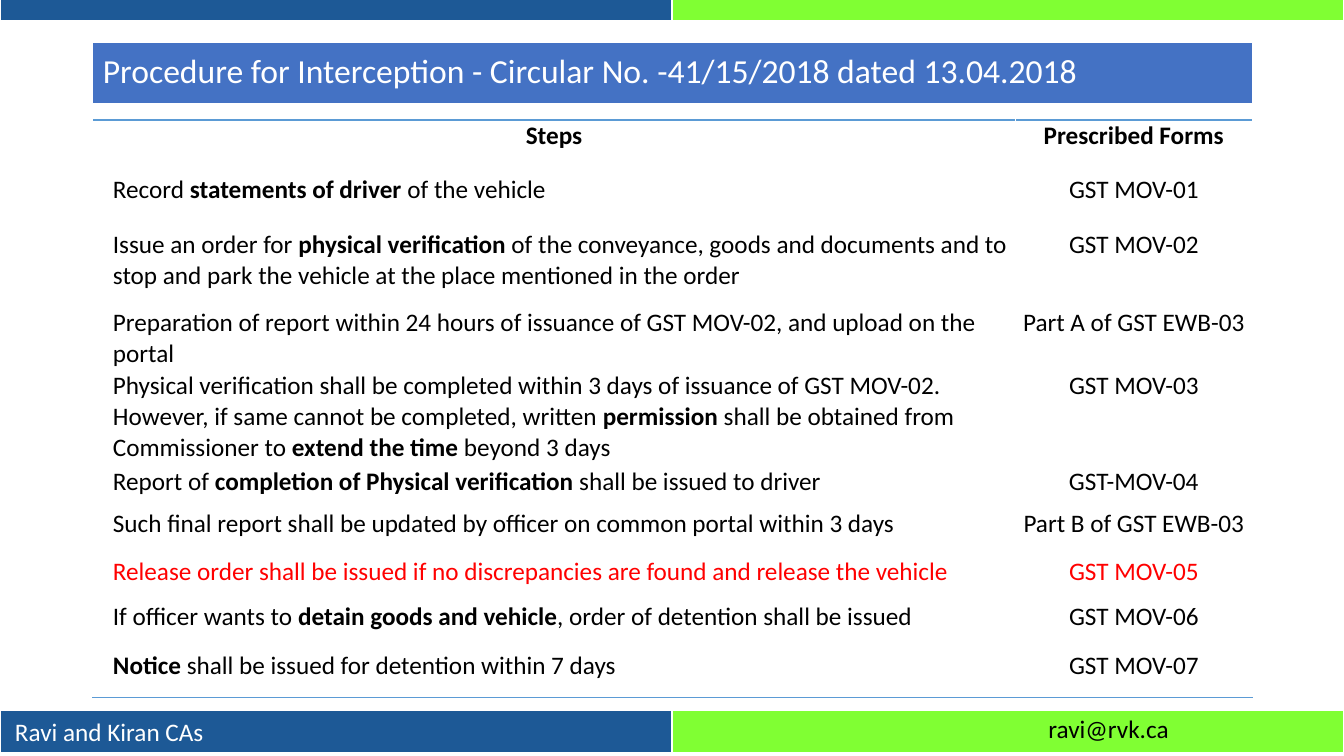
from lxml import etree
from pptx import Presentation
from pptx.dml.color import RGBColor
from pptx.enum.text import MSO_ANCHOR, MSO_AUTO_SIZE, PP_ALIGN
from pptx.oxml.ns import qn
from pptx.util import Inches, Pt

LEFT, CENTER = PP_ALIGN.LEFT, PP_ALIGN.CENTER
MIDDLE = MSO_ANCHOR.MIDDLE
NO_FIT = MSO_AUTO_SIZE.NONE

WHITE = RGBColor(0xFF, 0xFF, 0xFF)
BLACK = RGBColor(0x00, 0x00, 0x00)
RED = RGBColor(0xFF, 0x00, 0x00)
NAVY = RGBColor(0x1D, 0x59, 0x96)
LIME = RGBColor(0x80, 0xFF, 0x33)
TITLE_BLUE = RGBColor(0x44, 0x72, 0xC4)
RULE_BLUE = RGBColor(0x5B, 0x9B, 0xD5)

TITLE = "Procedure for Interception - Circular No. -41/15/2018 dated 13.04.2018"

# Step, form, row height; ** switches bold on and off
STEPS = [
    ("**Steps**", "**Prescribed Forms**", 0.53),
    ("Record **statements of driver **of the vehicle", "GST MOV-01", 0.55),
    ("Issue an order for **physical verification **of the conveyance, goods and documents "
     "and to stop and park the vehicle at the place mentioned in the order", "GST MOV-02", 0.77),
    ("Preparation of report within 24 hours of issuance of GST MOV-02, and upload on the portal",
     "Part A of GST EWB-03", 0.63),
    ("Physical verification shall be completed within 3 days of issuance of GST MOV-02. "
     "However, if same cannot be completed, written **permission** shall be obtained from "
     "Commissioner to **extend the time **beyond 3 days", "GST MOV-03", 0.95),
    ("Report of **completion of Physical verification** shall be issued to driver",
     "GST-MOV-04", 0.42),
    ("Such final report shall be updated by officer on common portal within 3 days",
     "Part B of GST EWB-03", 0.47),
    ("Release order shall be issued if no discrepancies are found and release the vehicle",
     "GST MOV-05", 0.45),
    ("If officer wants to **detain goods and vehicle**, order of detention shall be issued",
     "GST MOV-06", 0.48),
    ("**Notice** shall be issued for detention within 7 days", "GST MOV-07", 0.48),
]
RELEASE_ROW = 7
COLUMNS = (9.15, 2.35)
SLIDE_W, SLIDE_H = 13.33, 7.5
BAND_H = 0.43
BAND_TOPS = (-0.21, 7.05)
FOOTER = [("Ravi and Kiran CAs", 0.05, 7.06, 2.29, WHITE),
          ("ravi@rvk.ca", 10.3, 7.03, 1.56, BLACK)]


def write(tf, text, size=18, color=BLACK, align=LEFT, spacing=None):
    """Fill the first paragraph, with bold between ** marks."""
    p = tf.paragraphs[0]
    p.alignment = align
    if spacing:
        p.line_spacing = spacing
    for i, part in enumerate(text.split("**")):
        if part:
            r = p.add_run()
            r.text = part
            r.font.name = "Calibri"
            r.font.size = Pt(size)
            r.font.bold = i % 2 == 1
            r.font.color.rgb = color
    return p


def set_borders(cell, **sides):
    """Set borders as side=(colour, points), sides in the order L, R, T, B."""
    tcPr = cell._tc.get_or_add_tcPr()
    for i, (side, (color, width)) in enumerate(sides.items()):
        ln = etree.Element(qn("a:ln" + side), w=str(Pt(width)))
        fill = etree.SubElement(ln, qn("a:solidFill"))
        etree.SubElement(fill, qn("a:srgbClr"), val=str(color))
        tcPr.insert(i, ln)


def add_plain_table(s, left, top, widths, heights):
    table = s.shapes.add_table(len(heights), len(widths), Inches(left), Inches(top),
                               Inches(sum(widths)), Inches(sum(heights))).table
    table.first_row = table.horz_banding = False
    for column, width in zip(table.columns, widths):
        column.width = Inches(width)
    for row, height in zip(table.rows, heights):
        row.height = Inches(height)
    return table


def add_band(s, top):
    table = add_plain_table(s, 0, top, [SLIDE_W / 2] * 2, [BAND_H])
    for cell, color in zip(table.rows[0].cells, (NAVY, LIME)):
        cell.fill.solid()
        cell.fill.fore_color.rgb = color
        set_borders(cell, L=(WHITE, 1), R=(WHITE, 1), T=(WHITE, 1), B=(WHITE, 3))


def add_steps(s):
    table = add_plain_table(s, 0.92, 1.19, COLUMNS, [height for *_, height in STEPS])
    last = len(STEPS) - 1
    for i, (step, form, _) in enumerate(STEPS):
        for j, text in enumerate((step, form)):
            cell = table.cell(i, j)
            cell.fill.background()
            cell.margin_left = cell.margin_right = Inches(0.01)
            cell.margin_top = cell.margin_bottom = Inches(0.01)
            is_step = i > 0 and j == 0
            p = write(cell.text_frame, text, color=RED if i == RELEASE_ROW else BLACK,
                      align=LEFT if is_step else CENTER)
            if is_step:
                p._p.get_or_add_pPr().set("marL", str(Inches(0.19)))
            if i == 0:
                set_borders(cell, T=(RULE_BLUE, 1))
            elif i == last:
                set_borders(cell, B=(RULE_BLUE, 1))


def add_title(s):
    title = s.shapes.title
    title.left, title.top = Inches(0.92), Inches(0.42)
    title.width, title.height = Inches(sum(COLUMNS)), Inches(0.61)
    title.fill.solid()
    title.fill.fore_color.rgb = TITLE_BLUE
    title.line.color.rgb = WHITE
    title.line.width = Pt(1)
    tf = title.text_frame
    tf.auto_size = NO_FIT
    tf.word_wrap = True
    tf.vertical_anchor = MIDDLE
    write(tf, TITLE, size=24, color=WHITE, spacing=0.9)


def main():
    prs = Presentation()
    prs.slide_width, prs.slide_height = Inches(SLIDE_W), Inches(SLIDE_H)
    s = prs.slides.add_slide(prs.slide_layouts[5])
    for top in BAND_TOPS:
        add_band(s, top)
    for text, left, top, width, color in FOOTER:
        box = s.shapes.add_textbox(Inches(left), Inches(top), Inches(width), Inches(0.4))
        write(box.text_frame, text, color=color)
    add_steps(s)
    add_title(s)
    prs.save("out.pptx")


if __name__ == "__main__":
    main()
